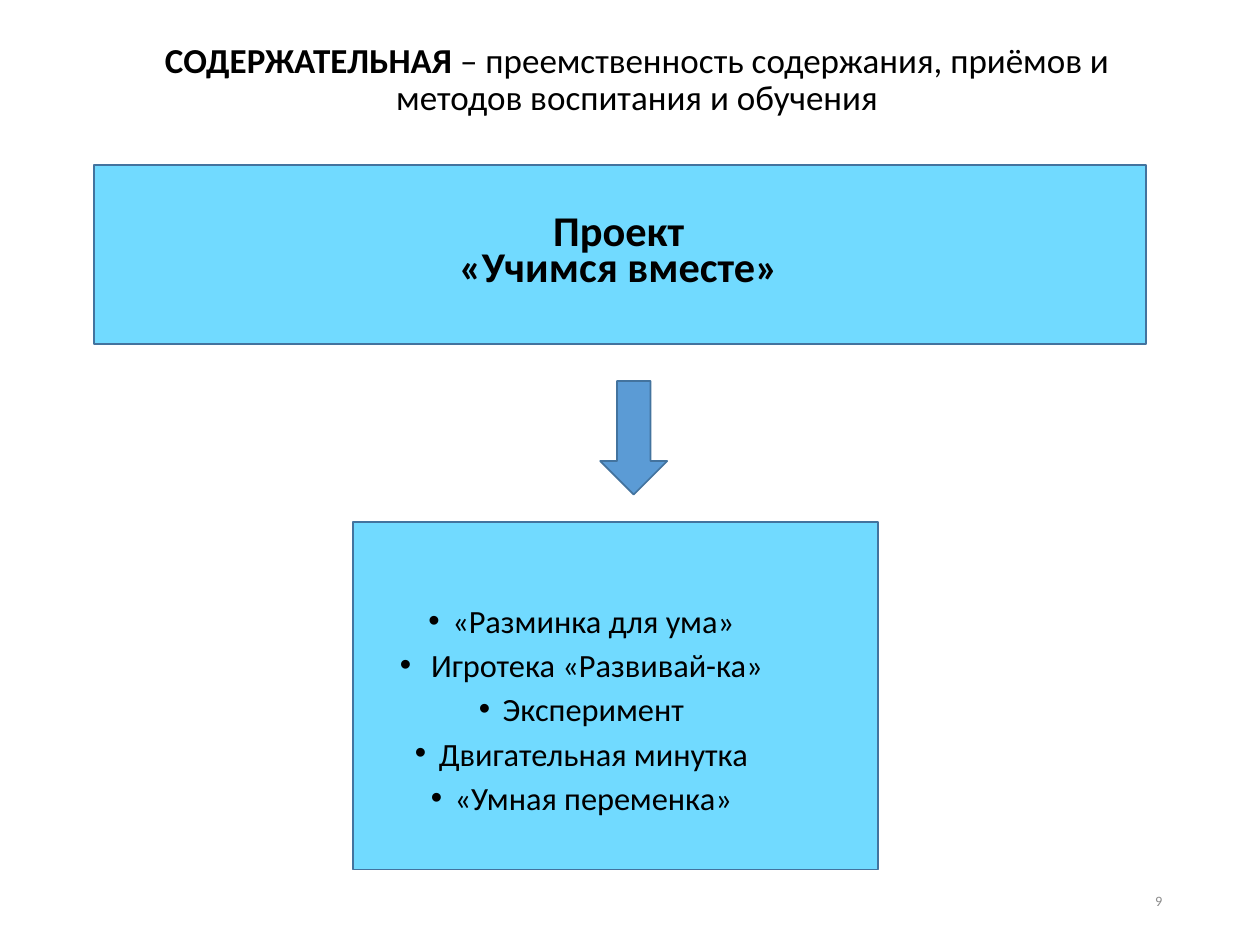
from lxml import etree
from pptx import Presentation
from pptx.dml.color import RGBColor as Rgb
from pptx.enum.shapes import MSO_SHAPE as Kind
from pptx.enum.text import MSO_ANCHOR as Anchor, PP_ALIGN as Align
from pptx.oxml.ns import qn
from pptx.util import Cm, Pt

HUES = {"sky": "71DAFF", "blue": "5B9BD5", "edge": "43739E",
        "ink": "000000", "gray": "8C8C8C"}
FONT = "Calibri"
GAMES = ["«Разминка для ума»", " Игротека «Развивай-ка»", "Эксперимент",
         "Двигательная минутка", "«Умная переменка»"]


def hue(name):
    return Rgb.from_string(HUES[name])


def add_form(slide, kind, box, fill, turn=0):
    form = slide.shapes.add_shape(kind, *map(Cm, box))
    form.shadow.inherit = False
    form.fill.solid()
    form.fill.fore_color.rgb = hue(fill)
    form.line.color.rgb = hue("edge")
    form.line.width = Pt(1)
    form.rotation = turn


def add_dot(para):
    """Give a paragraph a bullet with a hanging indent."""
    props = para._p.get_or_add_pPr()
    props.set("marL", str(Cm(0.48)))
    props.set("indent", str(-Cm(0.48)))
    etree.SubElement(props, qn("a:buFont")).set("typeface", "Arial")
    etree.SubElement(props, qn("a:buChar")).set("char", "•")


def add_text(slide, box, paras, size, color="ink", align=Align.CENTER,
             anchor=Anchor.TOP, lead=1.0, gap=0, dots=False,
             right=0.25, low=0.13):
    """Each paragraph is a list of (text, bold) runs."""
    frame = slide.shapes.add_textbox(*map(Cm, box)).text_frame
    frame.word_wrap = True
    frame.vertical_anchor = anchor
    frame.margin_right, frame.margin_bottom = Cm(right), Cm(low)
    for i, runs in enumerate(paras):
        para = frame.add_paragraph() if i else frame.paragraphs[0]
        para.alignment = align
        para.line_spacing = lead
        para.space_before = Pt(gap if i else 0)
        if dots:
            add_dot(para)
        for text, bold in runs:
            run = para.add_run()
            run.text = text
            font = run.font
            font.name, font.size, font.bold = FONT, Pt(size), bold
            font.color.rgb = hue(color)


def main():
    deck = Presentation()
    deck.slide_width, deck.slide_height = Cm(25.4), Cm(19.05)
    slide = deck.slides.add_slide(deck.slide_layouts[6])

    add_form(slide, Kind.RECTANGLE, (7.11, 10.52, 10.59, 7.01), "sky")
    add_form(slide, Kind.RECTANGLE, (1.9, 3.33, 21.21, 3.61), "sky")
    add_text(slide, (6.1, 3.53, 13, 2.79),
             [[("Проект", True)], [("«Учимся вместе»", True)]],
             24.2, anchor=Anchor.BOTTOM, lead=0.7, right=0.5, low=0.48)
    add_text(slide, (1.75, 12.14, 19.94, 4.8),
             [[(game, False)] for game in GAMES],
             18.5, lead=0.8, gap=7.5, dots=True)
    add_text(slide, (1.9, 0.74, 21.89, 2.59),
             [[("СОДЕРЖАТЕЛЬНАЯ ", True),
               ("– преемственность содержания, приёмов и методов "
                "воспитания и обучения", False)]], 20, lead=0.9)
    add_text(slide, (17.96, 17.65, 5.72, 1.02), [[("9", False)]], 8.2,
             color="gray", align=Align.RIGHT, anchor=Anchor.MIDDLE)
    add_form(slide, Kind.RIGHT_ARROW, (11.63, 8.15, 2.29, 1.35), "blue", 90)

    deck.save("out.pptx")


if __name__ == "__main__":
    main()
